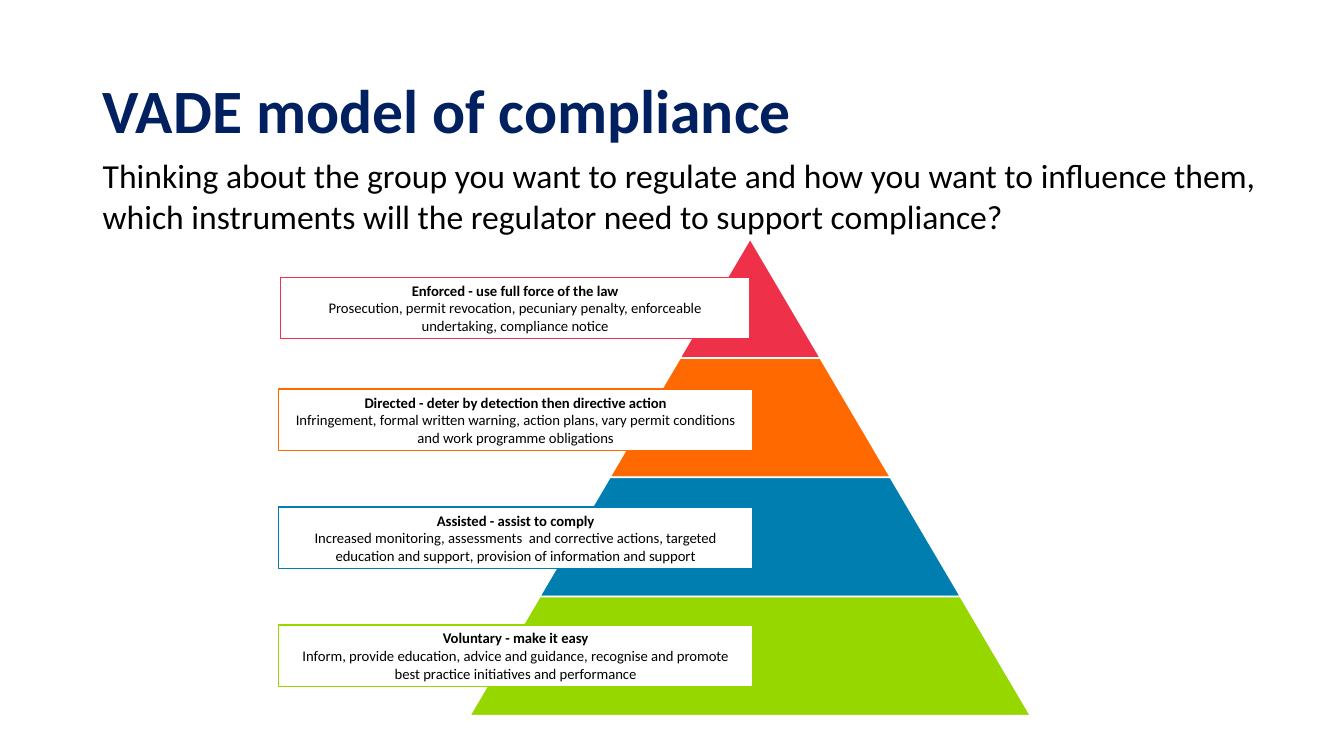
from dataclasses import dataclass

import pptx
import pptx.dml.color
import pptx.enum.shapes
import pptx.enum.text
import pptx.util
from pptx.shapes.autoshape import Shape
from pptx.slide import Slide
from pptx.util import Inches

COLOURS: dict[str, str] = {
    "navy": "002060",
    "black": "000000",
    "white": "FFFFFF",
    "red": "EE3048",
    "orange": "FF6900",
    "blue": "007EAF",
    "green": "97D700",
}
FONT = "Calibri"
PYRAMID_CENTRE = 7.44
PYRAMID_TOP = 2.37
LEVEL_HEIGHT = 1.18
LEVEL_PITCH = 1.183
SLOPE = 0.589


@dataclass(frozen=True)
class Level:
    colour: str
    heading: str
    instruments: str
    box_left: float
    box_top: float
    box_width: float


LEVELS = [
    Level("red", "Enforced - use full force of the law",
          "Prosecution, permit revocation, pecuniary penalty, enforceable "
          "undertaking, compliance notice", 2.78, 2.75, 4.66),
    Level("orange", "Directed - deter by detection then directive action",
          "Infringement, formal written warning, action plans, vary permit "
          "conditions and work programme obligations", 2.76, 3.86, 4.71),
    Level("blue", "Assisted - assist to comply",
          "Increased monitoring, assessments  and corrective actions, targeted "
          "education and support, provision of information and support",
          2.76, 5.03, 4.71),
    Level("green", "Voluntary - make it easy",
          "Inform, provide education, advice and guidance, recognise and "
          "promote best practice initiatives and performance", 2.76, 6.2, 4.71),
]


def colour(name: str) -> pptx.dml.color.RGBColor:
    return pptx.dml.color.RGBColor.from_string(COLOURS[name])


def format_runs(paragraph, size: float, colour_name: str, bold: bool = False) -> None:
    for run in paragraph.runs:
        run.font.name = FONT
        run.font.size = pptx.util.Pt(size)
        run.font.bold = bold
        run.font.color.rgb = colour(colour_name)


def paint(shape: Shape, fill: str, line: str) -> None:
    shape.shadow.inherit = False
    shape.fill.solid()
    shape.fill.fore_color.rgb = colour(fill)
    shape.line.color.rgb = colour(line)
    shape.line.width = pptx.util.Pt(1)


def add_title(slide: Slide) -> None:
    title = slide.shapes.title
    title.left, title.top = Inches(0.92), Inches(0.4)
    title.width, title.height = Inches(11.5), Inches(1.45)
    frame = title.text_frame
    frame.text = "VADE model of compliance"
    frame.vertical_anchor = pptx.enum.text.MSO_ANCHOR.MIDDLE
    paragraph = frame.paragraphs[0]
    paragraph.alignment = pptx.enum.text.PP_ALIGN.LEFT
    paragraph.line_spacing = 0.9
    format_runs(paragraph, 44, "navy", bold=True)


def add_question(slide: Slide) -> None:
    question = slide.shapes.add_textbox(
        Inches(0.92), Inches(1.49), Inches(12), Inches(0.91))
    frame = question.text_frame
    frame.word_wrap = True
    frame.text = (
        "Thinking about the group you want to regulate and how you want to "
        "influence them, which instruments will the regulator need to support "
        "compliance?")
    format_runs(frame.paragraphs[0], 24, "black")


def add_pyramid_level(slide: Slide, level: Level, index: int) -> None:
    """Draw one layer; each is wider than the one above by the same step."""
    width = 2 * SLOPE * LEVEL_HEIGHT * (index + 1)
    layer = slide.shapes.add_shape(
        pptx.enum.shapes.MSO_SHAPE.TRAPEZOID,
        Inches(PYRAMID_CENTRE - width / 2),
        Inches(PYRAMID_TOP + index * LEVEL_PITCH),
        Inches(width), Inches(LEVEL_HEIGHT))
    layer.adjustments[0] = SLOPE
    paint(layer, level.colour, "white")


def add_level_box(slide: Slide, level: Level) -> None:
    box = slide.shapes.add_shape(
        pptx.enum.shapes.MSO_SHAPE.RECTANGLE,
        Inches(level.box_left), Inches(level.box_top),
        Inches(level.box_width), Inches(0.61))
    paint(box, "white", level.colour)
    frame = box.text_frame
    frame.word_wrap = True
    frame.vertical_anchor = pptx.enum.text.MSO_ANCHOR.MIDDLE
    frame.text = f"{level.heading}\n{level.instruments}"
    for index, paragraph in enumerate(frame.paragraphs):
        paragraph.alignment = pptx.enum.text.PP_ALIGN.CENTER
        format_runs(paragraph, 10.5, "black", bold=index == 0)


def main() -> None:
    presentation = pptx.Presentation()
    presentation.slide_width = Inches(13.33)
    presentation.slide_height = Inches(7.5)
    title_only = presentation.slide_layouts[5]
    slide = presentation.slides.add_slide(title_only)
    add_title(slide)
    for index, level in enumerate(LEVELS):
        add_pyramid_level(slide, level, index)
    add_question(slide)
    for level in LEVELS:
        add_level_box(slide, level)
    presentation.save("out.pptx")


if __name__ == "__main__":
    main()
